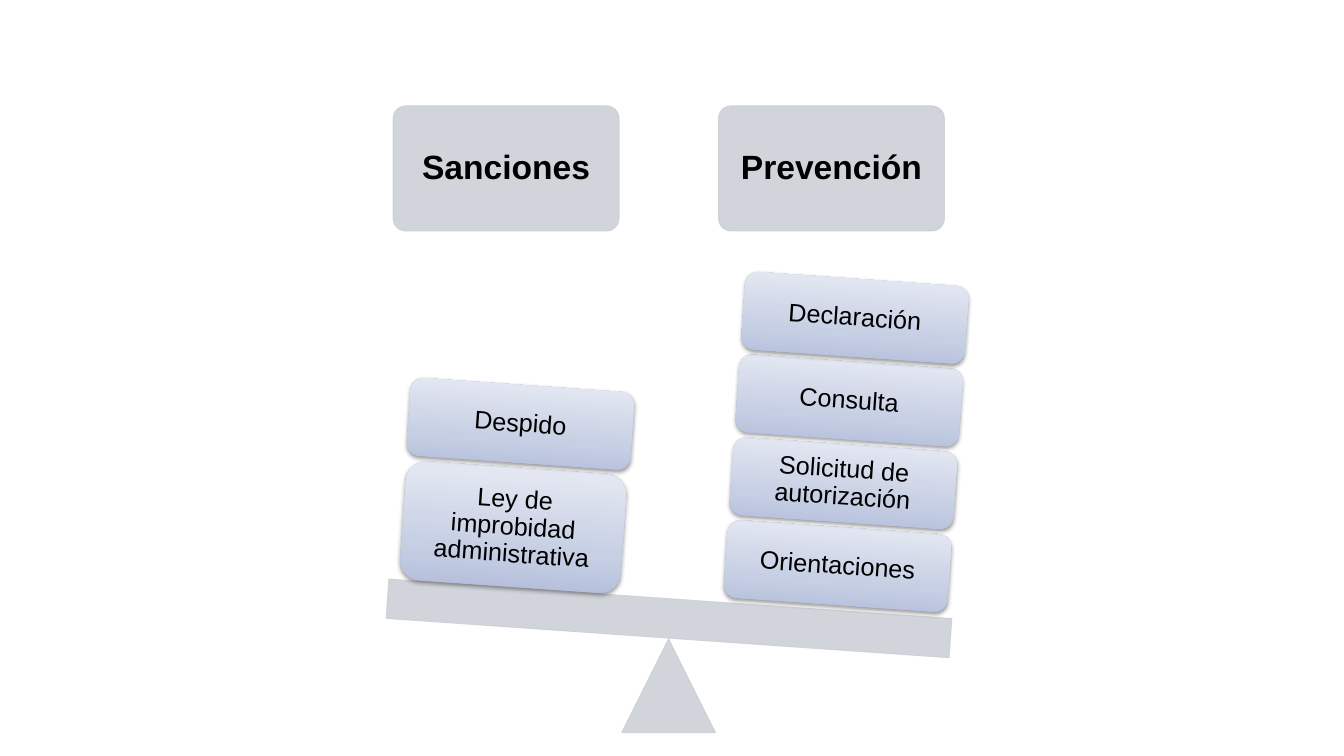
import math
import pptx
import pptx.util
import pptx.dml.color
import pptx.enum.shapes
import pptx.enum.text
import pptx.oxml
import pptx.oxml.ns

Cm, Pt = pptx.util.Cm, pptx.util.Pt
Kind = pptx.enum.shapes.MSO_SHAPE
NS = pptx.oxml.ns.nsdecls("a")

SIDES = [
    {"head": "Sanciones", "left": 9.91, "base": (12.83, 14.78),
     "blocks": [("Ley de improbidad administrativa", 5.56, 3.0),
                ("Despido", 5.64, 1.96)]},
    {"head": "Prevención", "left": 18.11, "base": (21.04, 15.24),
     "blocks": [(name, 5.64, 1.96) for name in
                ("Orientaciones", "Solicitud de autorización",
                 "Consulta", "Declaración")]},
]
THEME = {
    "font": "Arial", "ink": "000000", "gray": "CDD0D7", "alpha": 90,
    "fade": [(0, "AFBBDA"), (35, "C7CFE4"), (100, "EAEDF5")],
    "head": 24, "block": 18,
}
TILT = 4
GAP = 0.13

deck = pptx.Presentation()
deck.slide_width, deck.slide_height = Cm(33.87), Cm(19.05)
slide = deck.slides.add_slide(deck.slide_layouts[6])


def color(code):
    return pptx.dml.color.RGBColor.from_string(code)


def draw(kind, left, top, width, height, turn=0):
    shape = slide.shapes.add_shape(
        kind, Cm(left), Cm(top), Cm(width), Cm(height))
    shape.rotation = turn
    shape.shadow.inherit = False
    return shape


def paint(shape):
    shape.line.width = Pt(0.75)
    for fill in (shape.fill, shape.line.fill):
        fill.solid()
        fill.fore_color.rgb = color(THEME["gray"])
    for tint in shape._element.spPr.iter(pptx.oxml.ns.qn("a:srgbClr")):
        tint.append(pptx.oxml.parse_xml(
            f'<a:alpha {NS} val="{THEME["alpha"] * 1000}"/>'))


def shade(shape):
    shape.line.fill.background()
    stops = "".join(
        f'<a:gs pos="{pos * 1000}"><a:srgbClr val="{code}"/></a:gs>'
        for pos, code in THEME["fade"])
    props = shape._element.spPr
    props.find(pptx.oxml.ns.qn("a:prstGeom")).addnext(pptx.oxml.parse_xml(
        f'<a:gradFill {NS} rotWithShape="1"><a:gsLst>{stops}</a:gsLst>'
        '<a:lin ang="16200000" scaled="0"/></a:gradFill>'))
    props.find(pptx.oxml.ns.qn("a:effectLst")).append(pptx.oxml.parse_xml(
        f'<a:outerShdw {NS} blurRad="40000" dist="20000" dir="5400000" '
        'rotWithShape="0"><a:srgbClr val="000000"><a:alpha val="38000"/>'
        '</a:srgbClr></a:outerShdw>'))


def write(shape, text, size, bold=False, inset=0.18):
    frame = shape.text_frame
    frame.word_wrap = True
    frame.vertical_anchor = pptx.enum.text.MSO_ANCHOR.MIDDLE
    frame.margin_left = frame.margin_right = Cm(inset)
    frame.margin_top = frame.margin_bottom = Cm(inset)
    para = frame.paragraphs[0]
    para.alignment = pptx.enum.text.PP_ALIGN.CENTER
    para.line_spacing = 0.9
    para.space_after = Pt(0.35 * size)
    run = para.add_run()
    run.text = text
    run.font.name = THEME["font"]
    run.font.size = Pt(size)
    run.font.bold = bold
    run.font.color.rgb = color(THEME["ink"])


def stack(base, blocks):
    rise = 0
    slope = math.radians(TILT)
    for text, width, height in blocks:
        mid = rise + height / 2
        x = base[0] + mid * math.sin(slope)
        y = base[1] - mid * math.cos(slope)
        block = draw(Kind.ROUNDED_RECTANGLE, x - width / 2, y - height / 2,
                     width, height, TILT)
        shade(block)
        write(block, text, THEME["block"])
        rise += height + GAP


def main():
    for side in SIDES:
        head = draw(Kind.ROUNDED_RECTANGLE, side["left"], 2.67, 5.69, 3.15)
        head.adjustments[0] = 0.1
        paint(head)
        write(head, side["head"], THEME["head"], bold=True, inset=0.25)
    paint(draw(Kind.ISOSCELES_TRIANGLE, 15.67, 16.1, 2.36, 2.36))
    paint(draw(Kind.RECTANGLE, 9.75, 15.09, 14.22, 0.99, TILT))
    for side in reversed(SIDES):
        stack(side["base"], side["blocks"])
    deck.save("out.pptx")


if __name__ == "__main__":
    main()
